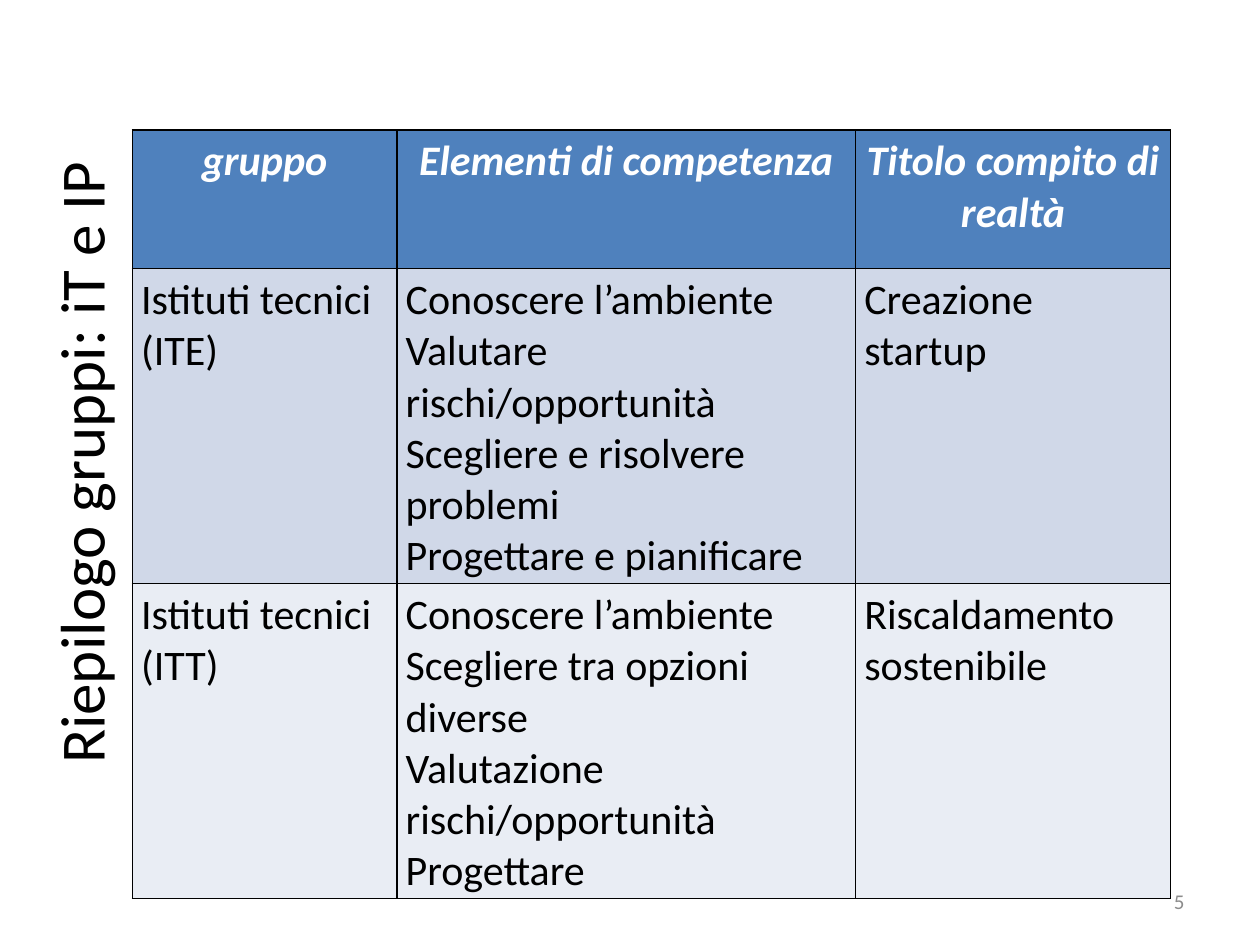
import pptx
import pptx.util
import pptx.dml.color
import pptx.enum.text
import pptx.oxml
import pptx.oxml.ns

Inches, Pt = pptx.util.Inches, pptx.util.Pt
RGBColor = pptx.dml.color.RGBColor
Align = pptx.enum.text.PP_ALIGN

BLACK = RGBColor(0x00, 0x00, 0x00)
WHITE = RGBColor(0xFF, 0xFF, 0xFF)
GREY = RGBColor(0x8C, 0x8C, 0x8C)
BLUE = RGBColor(0x4F, 0x81, 0xBD)
BANDS = [RGBColor(0xD0, 0xD8, 0xE8), RGBColor(0xE9, 0xED, 0xF4)]
FONT = "Calibri"

COLS = [2.1, 3.64, 2.5]
ROWS = [1.1, 2.09, 2.09]
CELLS = [
    ["gruppo", "Elementi di competenza", "Titolo compito di realtà"],
    ["Istituti tecnici (ITE)",
     "Conoscere l’ambiente\nValutare rischi/opportunità\n"
     "Scegliere e risolvere problemi\nProgettare e pianificare",
     "Creazione startup"],
    ["Istituti tecnici (ITT)",
     "Conoscere l’ambiente\nScegliere tra opzioni diverse\n"
     "Valutazione rischi/opportunità\nProgettare",
     "Riscaldamento sostenibile"],
]


def write(frame, text, size, color, align, strong=False):
    """Set the text and give all its runs one style."""
    frame.word_wrap = True
    frame.text = text
    for para in frame.paragraphs:
        para.alignment = align
        for run in para.runs:
            font = run.font
            font.name, font.size = FONT, Pt(size)
            font.bold = font.italic = strong
            font.color.rgb = color


def label(slide, box, text, size, color, align, turn=0):
    shape = slide.shapes.add_textbox(*map(Inches, box))
    shape.rotation = turn
    shape.text_frame.vertical_anchor = pptx.enum.text.MSO_ANCHOR.MIDDLE
    write(shape.text_frame, text, size, color, align)


def border(cell):
    props = cell._tc.get_or_add_tcPr()
    for n, side in enumerate(("lnL", "lnR", "lnT", "lnB")):
        line = pptx.oxml.parse_xml(
            f'<a:{side} {pptx.oxml.ns.nsdecls("a")} w="{Pt(1)}"><a:solidFill>'
            f'<a:srgbClr val="{BLACK}"/></a:solidFill></a:{side}>')
        props.insert(n, line)


def grid(slide, left, top):
    """Draw the table of groups from its top left corner."""
    box = map(Inches, (left, top, sum(COLS), sum(ROWS)))
    table = slide.shapes.add_table(len(ROWS), len(COLS), *box).table
    for col, width in zip(table.columns, COLS):
        col.width = Inches(width)
    for r, (row, height) in enumerate(zip(table.rows, ROWS)):
        row.height = Inches(height)
        head = r == 0
        for cell, text in zip(row.cells, CELLS[r]):
            cell.margin_left = cell.margin_right = Inches(0.07)
            cell.margin_top = cell.margin_bottom = Inches(0.05)
            cell.fill.solid()
            cell.fill.fore_color.rgb = BLUE if head else BANDS[r - 1]
            write(cell.text_frame, text, 24, WHITE if head else BLACK,
                  Align.CENTER if head else Align.LEFT, head)
            border(cell)


def main():
    deck = pptx.Presentation()
    deck.slide_width, deck.slide_height = Inches(10), Inches(7.5)
    slide = deck.slides.add_slide(deck.slide_layouts[6])
    label(slide, (-2.01, 3.49, 5.28, 0.37), "Riepilogo gruppi: iT e IP",
          36, BLACK, Align.CENTER, 270)
    grid(slide, 1.05, 1.03)
    label(slide, (7.17, 6.95, 2.33, 0.4), "5", 12, GREY, Align.RIGHT)
    deck.save("out.pptx")


if __name__ == "__main__":
    main()
